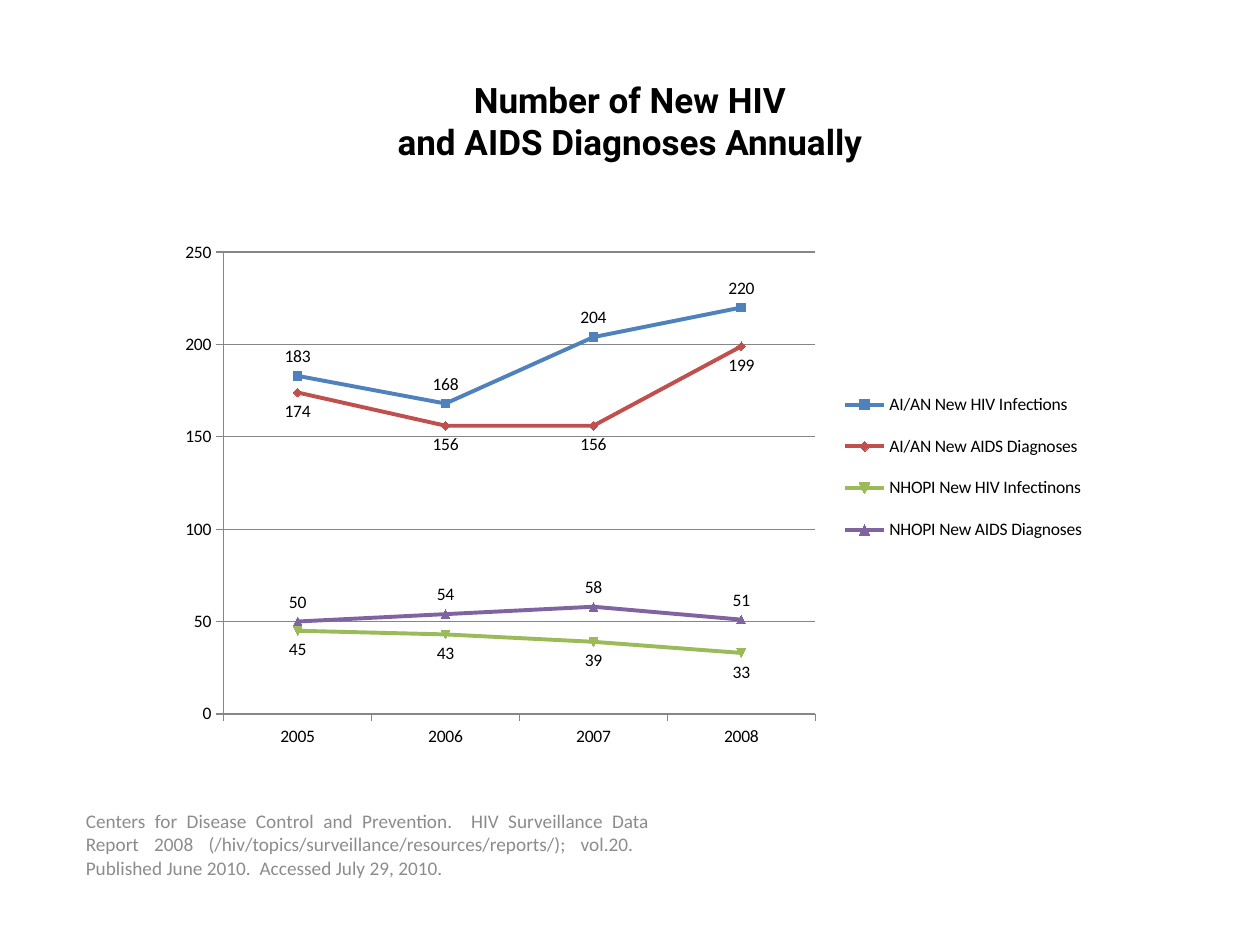
from lxml import etree
from pptx import Presentation
from pptx.chart.data import CategoryChartData
from pptx.dml.color import RGBColor
from pptx.enum import chart as ch, text as tx
from pptx.oxml import ns
from pptx.util import Cm, Pt

HEX = {"black": "000000", "gray": "8C8C8C", "grid": "868686",
       "blue": "4F81BD", "red": "C0504D", "green": "9BBB59", "plum": "8064A2"}
ABOVE, BELOW = ch.XL_LABEL_POSITION.ABOVE, ch.XL_LABEL_POSITION.BELOW
YEARS = ["2005", "2006", "2007", "2008"]
LINES = [
    ("AI/AN New HIV Infections", (183, 168, 204, 220), "blue", ABOVE),
    ("AI/AN New AIDS Diagnoses ", (174, 156, 156, 199), "red", BELOW),
    ("NHOPI New HIV Infectinons", (45, 43, 39, 33), "green", BELOW),
    ("NHOPI New AIDS Diagnoses", (50, 54, 58, 51), "plum", ABOVE),
]
TITLE = "Number of New HIV\vand AIDS Diagnoses Annually"
CITE = ("Centers for Disease Control and Prevention.  HIV Surveillance Data "
        "Report 2008 (/hiv/topics/surveillance/resources/reports/); vol.20.  "
        "Published June 2010.  Accessed July 29, 2010.")


def tint(name):
    return RGBColor.from_string(HEX[name])


def style(font, face, size, color, bold=False):
    font.name, font.size, font.bold = face, Pt(size), bold
    font.color.rgb = tint(color)


def add_text(slide, box, words, align, anchor, *look):
    frame = slide.shapes.add_textbox(*map(Cm, box)).text_frame
    frame.word_wrap = True
    frame.vertical_anchor = anchor
    frame.text = words
    para = frame.paragraphs[0]
    para.alignment = align
    for run in para.runs:
        style(run.font, *look)
    return frame


def stroke(line, color, width):
    line.color.rgb = tint(color)
    line.width = Pt(width)


def place(node, after, inner, **parts):
    """Give a plot area or legend a fixed place, in shares of the chart."""
    for old in node.findall(ns.qn("c:layout")):
        node.remove(old)
    layout = etree.Element(ns.qn("c:layout"))
    manual = etree.SubElement(layout, ns.qn("c:manualLayout"))
    rules = {"layoutTarget": "inner"} if inner else {}
    rules.update(xMode="edge", yMode="edge", **parts)
    for tag, val in rules.items():
        etree.SubElement(manual, ns.qn("c:" + tag)).set("val", str(val))
    if after is None:
        node.insert(0, layout)
    else:
        after.addnext(layout)


def add_lines(slide, box):
    data = CategoryChartData()
    data.categories = YEARS
    for name, vals, _, _ in LINES:
        data.add_series(name, vals)
    chart = slide.shapes.add_chart(
        ch.XL_CHART_TYPE.LINE_MARKERS, *map(Cm, box), data).chart
    chart.has_title = False
    style(chart.font, "Calibri", 10, "black")
    chart.plots[0].vary_by_categories = False

    # Series and their value labels
    for line, (_, _, color, spot) in zip(chart.plots[0].series, LINES):
        line.smooth = False
        stroke(line.format.line, color, 2.25)
        mark = line.marker.format
        mark.fill.solid()
        mark.fill.fore_color.rgb = tint(color)
        stroke(mark.line, color, 0.75)
        labels = line.data_labels
        labels.show_value = True
        labels.position = spot

    # Axes
    for axis in (chart.category_axis, chart.value_axis):
        axis.major_tick_mark = ch.XL_TICK_MARK.OUTSIDE
        axis.minor_tick_mark = ch.XL_TICK_MARK.NONE
        stroke(axis.format.line, "grid", 0.75)
    scale = chart.value_axis
    scale.minimum_scale, scale.maximum_scale, scale.major_unit = 0, 250, 50
    scale.has_major_gridlines = True
    stroke(scale.major_gridlines.format.line, "grid", 0.75)

    # Legend and plot places
    chart.has_legend = True
    legend = chart.legend
    legend.position = ch.XL_LEGEND_POSITION.RIGHT
    legend.include_in_layout = False
    root = legend._element
    place(root, root.find(ns.qn("c:legendPos")), False,
          x=0.72, y=0.27, w=0.28, h=0.36)
    plot = chart._chartSpace.chart.plotArea
    place(plot, None, True, x=0.06, y=0.04, w=0.64, h=0.88)


def main():
    deck = Presentation()
    deck.slide_width, deck.slide_height = Cm(25.4), Cm(19.05)
    slide = deck.slides.add_slide(deck.slide_layouts[6])

    # Chart
    add_lines(slide, (3.39, 4.66, 18.64, 10.58))

    # Title, lifted clear of the chart
    title = add_text(slide, (1.27, 1.9, 22.86, 2.54), TITLE, tx.PP_ALIGN.CENTER,
                     tx.MSO_ANCHOR.BOTTOM, "Roboto", 20, "black", True)
    title.margin_bottom = Cm(1.17)

    # Source
    add_text(slide, (1.48, 16.51, 11.86, 1.02), CITE, tx.PP_ALIGN.JUSTIFY,
             tx.MSO_ANCHOR.MIDDLE, "Calibri", 11, "gray")
    deck.save("out.pptx")


if __name__ == "__main__":
    main()
